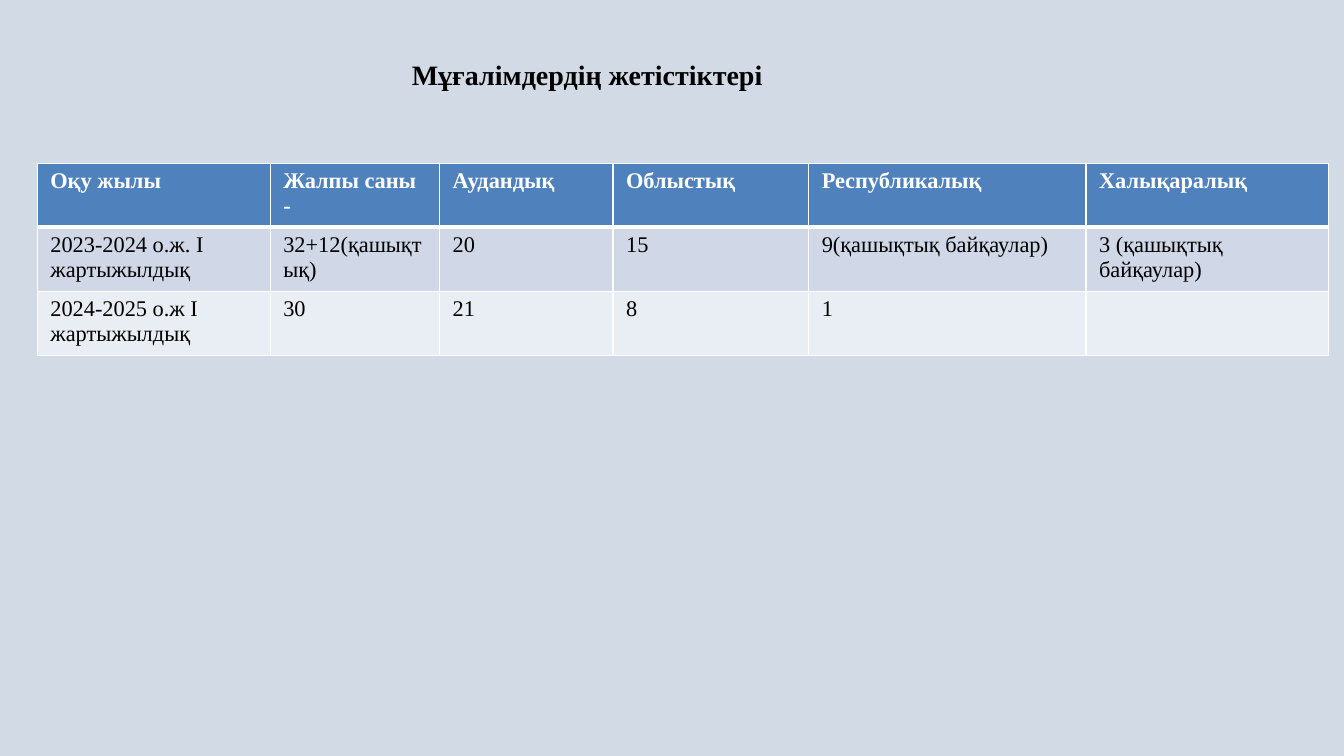
import pptx
import pptx.dml.color
import pptx.enum.text
import pptx.oxml
import pptx.oxml.ns
import pptx.util

Cm = pptx.util.Cm
Pt = pptx.util.Pt

HEADINGS = ["Оқу жылы", "Жалпы саны -", "Аудандық", "Облыстық",
            "Республикалық", "Халықаралық"]
YEARS = [
    ["2023-2024 о.ж. І жартыжылдық", "32+12(қашықтық)", "20", "15",
     "9(қашықтық байқаулар)", "3 (қашықтық байқаулар)"],
    ["2024-2025 о.ж І жартыжылдық", "30", "21", "8", "1", ""],
]
COLUMN_WIDTHS = [5.87, 4.27, 4.37, 4.93, 6.99, 6.12]
ROW_HEIGHT = 1.04
ROW_FILLS = ["4F81BD", "D0D8E8", "E9EDF4"]


def paint(fill, color):
    fill.solid()
    fill.fore_color.rgb = pptx.dml.color.RGBColor.from_string(color)


def write(frame, text, size=16, color="000000", bold=False,
          align=pptx.enum.text.PP_ALIGN.LEFT):
    paragraph = frame.paragraphs[0]
    paragraph.alignment = align
    paragraph.font.size = Pt(size)
    if text:
        run = paragraph.add_run()
        run.text = text
        run.font.name = "Times New Roman"
        run.font.size = Pt(size)
        run.font.bold = bold
        paint(run.font.fill, color)


def add_borders(cell, color="FFFFFF", **widths):
    """Set cell edges by side (L, R, T, B), with widths in points."""
    properties = cell._tc.get_or_add_tcPr()
    for position, (side, width) in enumerate(widths.items()):
        edge = pptx.oxml.parse_xml(
            f'<a:ln{side} {pptx.oxml.ns.nsdecls("a")} w="{Pt(width)}">'
            f'<a:solidFill><a:srgbClr val="{color}"/></a:solidFill>'
            f'</a:ln{side}>')
        properties.insert(position, edge)


def build_title(slide, left, top, width, height):
    title = slide.shapes.title
    title.left, title.top = Cm(left), Cm(top)
    title.width, title.height = Cm(width), Cm(height)
    title.text_frame.word_wrap = True
    title.text_frame.auto_size = pptx.enum.text.MSO_AUTO_SIZE.SHAPE_TO_FIT_TEXT
    write(title.text_frame, "Мұғалімдердің жетістіктері", size=20, bold=True,
          align=pptx.enum.text.PP_ALIGN.CENTER)


def build_achievements(slide, left, top):
    rows = [HEADINGS] + YEARS
    achievements = slide.shapes.add_table(
        len(rows), len(HEADINGS), Cm(left), Cm(top),
        Cm(sum(COLUMN_WIDTHS)), Cm(ROW_HEIGHT * len(rows))).table

    for column, width in zip(achievements.columns, COLUMN_WIDTHS):
        column.width = Cm(width)

    for row_index, values in enumerate(rows):
        header = row_index == 0
        for column_index, value in enumerate(values):
            cell = achievements.cell(row_index, column_index)
            cell.margin_left = cell.margin_right = Cm(0.33)
            cell.margin_top = cell.margin_bottom = Cm(0.13)
            paint(cell.fill, ROW_FILLS[row_index])
            add_borders(cell, L=1, R=1, T=3 if row_index == 1 else 1,
                        B=3 if header else 1)
            write(cell.text_frame, value, bold=header,
                  color="FFFFFF" if header else "000000")


def main():
    deck = pptx.Presentation()
    deck.slide_width, deck.slide_height = Cm(33.87), Cm(19.05)
    slide = deck.slides.add_slide(deck.slide_layouts[5])
    paint(slide.background.fill, "D2DBE5")

    # Heading
    build_title(slide, 4.93, 1.32, 19.74, 1.12)
    # Achievements by school year
    build_achievements(slide, 0.94, 4.11)

    deck.save("out.pptx")


if __name__ == "__main__":
    main()
